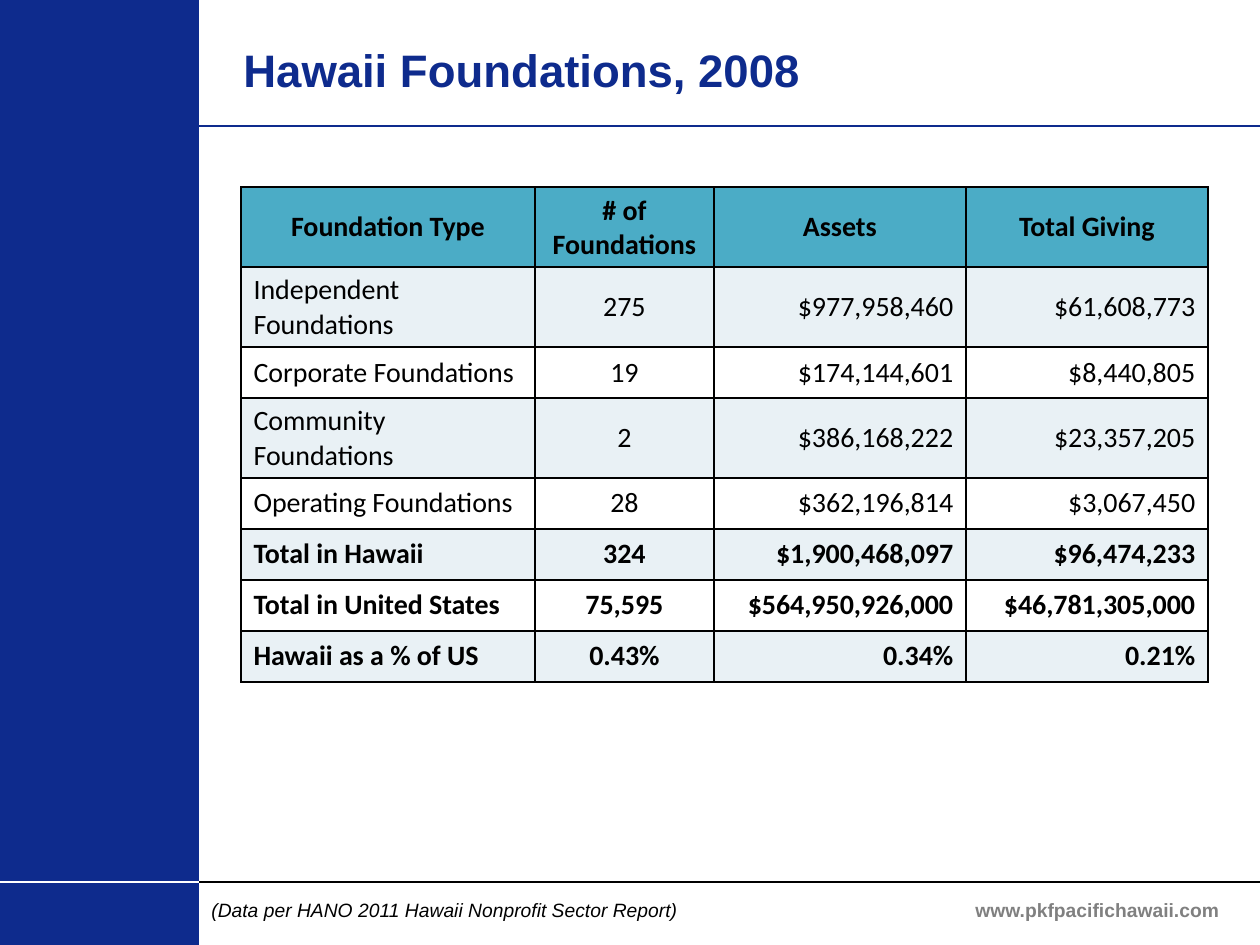
from lxml import etree
from pptx import Presentation
from pptx.dml.color import RGBColor
from pptx.enum.shapes import MSO_CONNECTOR, MSO_SHAPE
from pptx.enum.text import MSO_ANCHOR, PP_ALIGN
from pptx.oxml.ns import qn
from pptx.util import Pt

LEFT, CENTER, RIGHT = PP_ALIGN.LEFT, PP_ALIGN.CENTER, PP_ALIGN.RIGHT
TOP, MIDDLE = MSO_ANCHOR.TOP, MSO_ANCHOR.MIDDLE
STRAIGHT, RECTANGLE = MSO_CONNECTOR.STRAIGHT, MSO_SHAPE.RECTANGLE

# Content
NAVY, BLACK, WHITE, GRAY = "0E2B8D", "000000", "FFFFFF", "808080"
HEADER_FILL, BAND_FILL = "4BACC6", "E9F1F5"
PAGE_WIDTH, PAGE_HEIGHT, SIDEBAR_WIDTH = 1260, 945, 199
TITLE_RULE_Y, FOOTER_RULE_Y = 126, 882

RULES = [  # start x, end x, y, colour
    (0, PAGE_WIDTH, FOOTER_RULE_Y, BLACK),
    (SIDEBAR_WIDTH, 0, FOOTER_RULE_Y, WHITE),
    (SIDEBAR_WIDTH, PAGE_WIDTH, TITLE_RULE_Y, NAVY),
]
TEXTS = [  # wording, (left, top, width, height), anchor, alignment, font, colour
    ("Hawaii Foundations, 2008", (231, -10, 998, 158), MIDDLE, LEFT,
     {"size": Pt(26), "bold": True}, NAVY),
    ("www.pkfpacifichawaii.com", (935, 885, 325, 50), MIDDLE, CENTER,
     {"size": Pt(11), "bold": True}, GRAY),
    ("(Data per HANO 2011 Hawaii Nonprofit Sector Report)", (199, 892, 703, 36),
     TOP, LEFT, {"size": Pt(11), "italic": True}, BLACK),
]
ROWS = [
    ("Foundation Type", "# of Foundations", "Assets", "Total Giving"),
    ("Independent Foundations", "275", "$977,958,460", "$61,608,773"),
    ("Corporate Foundations", "19", "$174,144,601", "$8,440,805"),
    ("Community Foundations", "2", "$386,168,222", "$23,357,205"),
    ("Operating Foundations", "28", "$362,196,814", "$3,067,450"),
    ("Total in Hawaii", "324", "$1,900,468,097", "$96,474,233"),
    ("Total in United States", "75,595", "$564,950,926,000", "$46,781,305,000"),
    ("Hawaii as a % of US", "0.43%", "0.34%", "0.21%"),
]
TABLE_LEFT, TABLE_TOP = 241, 187
COLUMN_WIDTHS = [294, 179, 252, 242]
COLUMN_ALIGNMENTS = [LEFT, CENTER, RIGHT, RIGHT]
ONE_LINE, TWO_LINES = 51, 80
TWO_LINE_ROWS = {0, 1, 3}
FIRST_TOTAL_ROW = 5


def px(value):
    return round(value * 914400 / 126)


def color(value):
    return RGBColor.from_string(value)


def write(frame, text, alignment, font, text_color):
    para = frame.paragraphs[0]
    para.alignment = alignment
    span = para.add_run()
    span.text = text
    for name, value in font.items():
        setattr(span.font, name, value)
    span.font.color.rgb = color(text_color)


def add_borders(cell):
    properties = cell._tc.get_or_add_tcPr()
    for index, side in enumerate(("lnL", "lnR", "lnT", "lnB")):
        border = etree.Element(qn("a:" + side), w=str(Pt(1)))
        fill = etree.SubElement(border, qn("a:solidFill"))
        etree.SubElement(fill, qn("a:srgbClr"), val=BLACK)
        properties.insert(index, border)


def add_sidebar(page):
    sidebar = page.shapes.add_shape(
        RECTANGLE, 0, 0, px(SIDEBAR_WIDTH), px(PAGE_HEIGHT))
    sidebar.shadow.inherit = False
    sidebar.fill.solid()
    sidebar.fill.fore_color.rgb = color(NAVY)
    sidebar.line.fill.background()


def add_rule(page, start, end, y, line_color):
    rule = page.shapes.add_connector(STRAIGHT, px(start), px(y), px(end), px(y))
    rule.line.color.rgb = color(line_color)
    rule.line.width = Pt(1)
    etree.SubElement(rule._element.spPr, qn("a:effectLst"))


def add_text(page, text, place, anchor, alignment, font, text_color):
    box = page.shapes.add_textbox(*map(px, place))
    box.text_frame.word_wrap = True
    box.text_frame.vertical_anchor = anchor
    write(box.text_frame, text, alignment, {"name": "Arial", **font}, text_color)


def add_foundation_table(page):
    heights = [TWO_LINES if row in TWO_LINE_ROWS else ONE_LINE
               for row in range(len(ROWS))]
    table = page.shapes.add_table(
        len(ROWS), len(COLUMN_WIDTHS), px(TABLE_LEFT), px(TABLE_TOP),
        px(sum(COLUMN_WIDTHS)), px(sum(heights))).table
    for column, width in zip(table.columns, COLUMN_WIDTHS):
        column.width = px(width)
    for row_index, values in enumerate(ROWS):
        table.rows[row_index].height = px(heights[row_index])
        is_header = row_index == 0
        band = BAND_FILL if row_index % 2 else WHITE
        font = {"name": "Calibri", "size": Pt(16),
                "bold": is_header or row_index >= FIRST_TOTAL_ROW}
        for column_index, text in enumerate(values):
            cell = table.cell(row_index, column_index)
            cell.vertical_anchor = MIDDLE
            cell.fill.solid()
            cell.fill.fore_color.rgb = color(HEADER_FILL if is_header else band)
            alignment = CENTER if is_header else COLUMN_ALIGNMENTS[column_index]
            write(cell.text_frame, text, alignment, font, BLACK)
            add_borders(cell)


def main():
    deck = Presentation()
    deck.slide_width, deck.slide_height = px(PAGE_WIDTH), px(PAGE_HEIGHT)
    page = deck.slides.add_slide(deck.slide_layouts[6])

    # Frame of the page
    add_sidebar(page)
    for rule in RULES:
        add_rule(page, *rule)

    # Title, footer and table
    for text in TEXTS:
        add_text(page, *text)
    add_foundation_table(page)
    deck.save("out.pptx")


if __name__ == "__main__":
    main()
